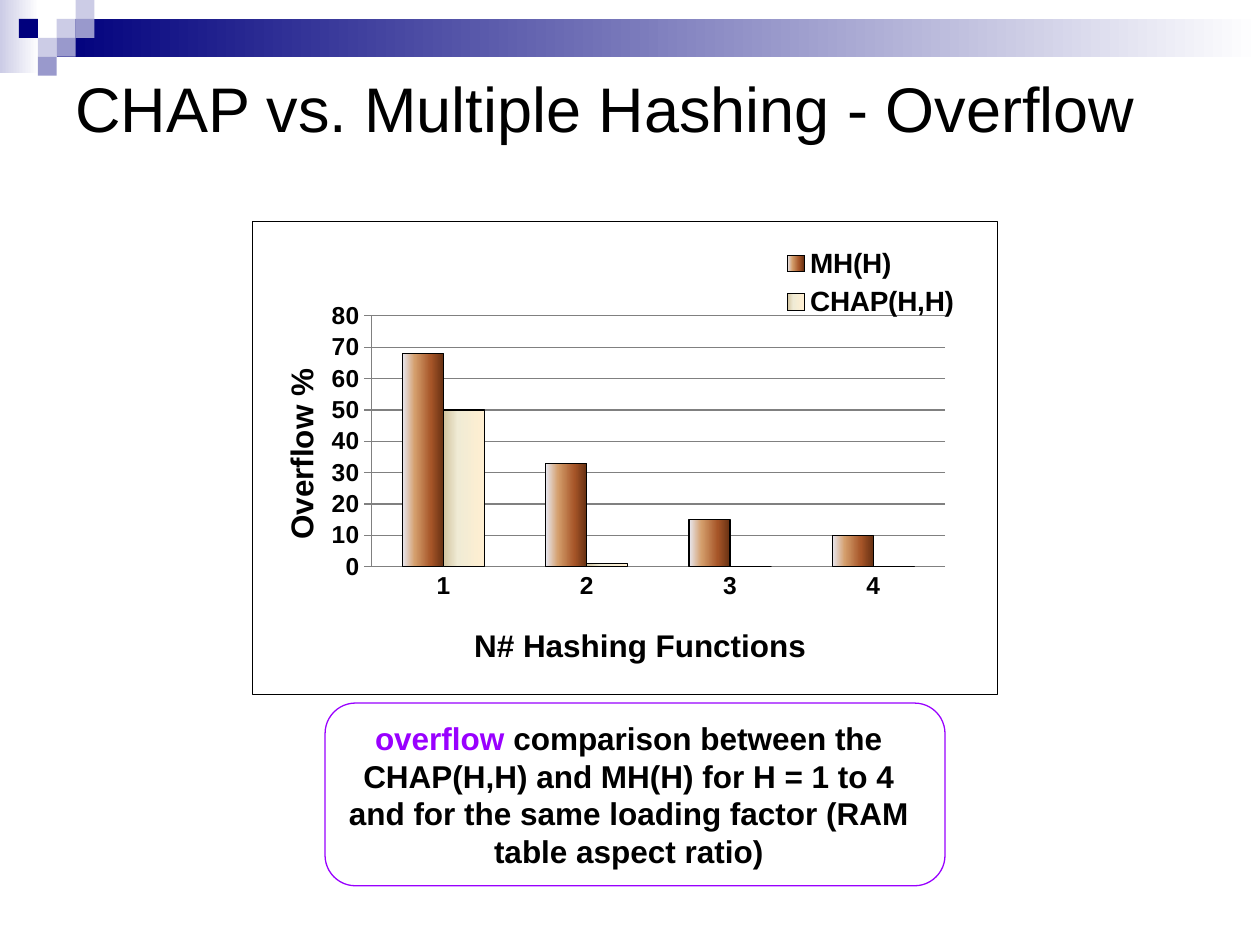
from lxml.etree import SubElement
from pptx import Presentation
from pptx.chart.data import CategoryChartData
from pptx.dml.color import RGBColor
from pptx.enum.chart import XL_CHART_TYPE as ChartType, XL_LEGEND_POSITION as LegendPosition, XL_TICK_MARK as TickMark
from pptx.enum.shapes import MSO_SHAPE as Shape
from pptx.enum.text import MSO_ANCHOR as Anchor, PP_ALIGN as Align
from pptx.oxml import parse_xml
from pptx.oxml.ns import nsdecls, qn
from pptx.util import Inches, Pt

COLORS = {
    "navy": "00007D", "lavender": "CCCCE6", "periwinkle": "9999CC", "white": "FFFFFF",
    "black": "000000", "purple": "9900FF", "gray": "808080",
}
rgb = {name: RGBColor.from_string(value) for name, value in COLORS.items()}


def set_gradient(fill, properties, stops):
    fill.gradient()
    fill.gradient_angle = 0
    stop_list = properties.find(".//" + qn("a:gsLst"))
    for stop in list(stop_list):
        stop_list.remove(stop)
    for position, color in stops:
        stop = SubElement(stop_list, qn("a:gs"), pos=str(position * 1000))
        SubElement(stop, qn("a:srgbClr"), val=color)


def make_layout(**places):
    modes = "".join(f'<c:{axis}Mode val="edge"/>' for axis in "xy")
    values = "".join(f'<c:{key} val="{value}"/>' for key, value in places.items())
    return parse_xml(f'<c:layout {nsdecls("c")}><c:manualLayout>{modes}{values}</c:manualLayout></c:layout>')


presentation = Presentation()
presentation.slide_width, presentation.slide_height = Inches(10), Inches(7.5)
slide = presentation.slides.add_slide(presentation.slide_layouts[6])

for left, top, width, height, color in [
    (0, 0, 0.31, 0.58, "lavender"),
    (0.45, 0.15, 9.55, 0.3, "navy"),
]:
    band = slide.shapes.add_shape(Shape.RECTANGLE, Inches(left), Inches(top), Inches(width), Inches(height))
    band.shadow.inherit = False
    band.line.fill.background()
    set_gradient(band.fill, band._element.spPr, [(0, COLORS[color]), (100, COLORS["white"])])

unit = 0.15
for column, row, color in [
    (3, 1, "lavender"), (4, 0, "lavender"), (4, 1, "periwinkle"), (2, 2, "lavender"),
    (1, 1, "navy"), (3, 2, "periwinkle"), (2, 3, "periwinkle"),
]:
    square = slide.shapes.add_shape(
        Shape.RECTANGLE, Inches(column * unit), Inches(row * unit), Inches(unit), Inches(unit))
    square.shadow.inherit = False
    square.line.fill.background()
    square.fill.solid()
    square.fill.fore_color.rgb = rgb[color]

title = slide.shapes.add_textbox(Inches(0.5), Inches(0.5), Inches(9), Inches(1.08))
title.text_frame.word_wrap = True
caption = slide.shapes.add_shape(
    Shape.ROUNDED_RECTANGLE, Inches(2.58), Inches(5.58), Inches(4.92), Inches(1.45))
caption.shadow.inherit = False
caption.fill.background()
caption.line.color.rgb = rgb["purple"]
caption.line.width = Pt(0.75)
caption_format = {
    "word_wrap": True, "vertical_anchor": Anchor.MIDDLE, "margin_left": Inches(0),
    "margin_right": Inches(0.1), "margin_top": Inches(0.05), "margin_bottom": Inches(0.05),
}
for name, value in caption_format.items():
    setattr(caption.text_frame, name, value)

caption_text = (" comparison between the CHAP(H,H) and MH(H) for H = 1 to 4 "
                "and for the same loading factor (RAM table aspect ratio)")
for shape, align, size, bold, runs in [
    (title, Align.LEFT, 36, False, [("CHAP vs. Multiple Hashing - Overflow", "black")]),
    (caption, Align.CENTER, 18, True, [("overflow", "purple"), (caption_text, "black")]),
]:
    paragraph = shape.text_frame.paragraphs[0]
    paragraph.alignment = align
    for text, color in runs:
        run = paragraph.add_run()
        run.text = text
        for name, value in {"name": "Arial", "size": Pt(size), "bold": bold}.items():
            setattr(run.font, name, value)
        run.font.color.rgb = rgb[color]

data = CategoryChartData(number_format="0")
data.categories = ["1", "2", "3", "4"]
data.add_series("MH(H)", [68, 33, 15, 10])
data.add_series("CHAP(H,H)", [50, 1, 0, 0])
chart = slide.shapes.add_chart(
    ChartType.COLUMN_CLUSTERED, Inches(2), Inches(1.75), Inches(5.92), Inches(3.77), data).chart
chart.has_title = False
chart.font.name = "Arial"
chart.font.size = Pt(10)
chart.font.color.rgb = rgb["black"]

plot = chart.plots[0]
for name, value in {"gap_width": 150, "overlap": 0, "vary_by_categories": False}.items():
    setattr(plot, name, value)
series_stops = [
    [(0, "E8E8F1"), (30, "D49E6C"), (70, "A65528"), (100, "663012")],
    [(0, "D1C39F"), (35, "F0EBD5"), (100, "FFEFD1")],
]
for series, stops in zip(plot.series, series_stops):
    set_gradient(series.format.fill, series._element.spPr, stops)
    series.format.line.color.rgb = rgb["black"]
    series.format.line.width = Pt(0.75)

for axis, text, tick, x, y in [
    (chart.category_axis, "N# Hashing Functions", TickMark.NONE, 0.29, 0.84),
    (chart.value_axis, "Overflow %", TickMark.CROSS, 0.03, 0.3),
]:
    axis.major_tick_mark = tick
    axis.minor_tick_mark = TickMark.NONE
    axis.format.line.color.rgb = rgb["gray"]
    axis.axis_title.text_frame.text = text
    title_font = axis.axis_title.text_frame.paragraphs[0].runs[0].font
    for font, size in [(title_font, 18), (axis.tick_labels.font, 14)]:
        for name, value in {"name": "Arial", "size": Pt(size), "bold": True}.items():
            setattr(font, name, value)
        font.color.rgb = rgb["black"]
    title_element = axis.axis_title._element
    for layout in title_element.findall(qn("c:layout")):
        title_element.remove(layout)
    title_element.find(qn("c:tx")).addnext(make_layout(x=x, y=y))

value_axis = chart.value_axis
for name, value in {"minimum_scale": 0, "maximum_scale": 80, "major_unit": 10}.items():
    setattr(value_axis, name, value)
value_axis.tick_labels.number_format = "0"
value_axis.tick_labels.number_format_is_linked = False
value_axis.has_major_gridlines = True
value_axis.major_gridlines.format.line.color.rgb = rgb["gray"]

chart.has_legend = True
legend = chart.legend
legend.position = LegendPosition.RIGHT
legend.include_in_layout = False
for name, value in {"name": "Arial", "size": Pt(16), "bold": True}.items():
    setattr(legend.font, name, value)
legend.font.color.rgb = rgb["black"]
for layout in legend._element.findall(qn("c:layout")):
    legend._element.remove(layout)
legend._element.find(qn("c:legendPos")).addnext(make_layout(x=0.71, y=0.04, w=0.24, h=0.18))

plot_area = chart._chartSpace.chart.plotArea
for layout in plot_area.findall(qn("c:layout")):
    plot_area.remove(layout)
plot_layout = make_layout(x=0.16, y=0.2, w=0.77, h=0.53)
plot_layout[0].insert(0, parse_xml(f'<c:layoutTarget {nsdecls("c")} val="inner"/>'))
plot_area.insert(0, plot_layout)
chart._chartSpace.chart.addnext(parse_xml(
    f'<c:spPr {nsdecls("c", "a")}><a:noFill/><a:ln w="{Pt(0.75)}"><a:solidFill>'
    f'<a:srgbClr val="{COLORS["black"]}"/></a:solidFill></a:ln></c:spPr>'))

presentation.save("out.pptx")
